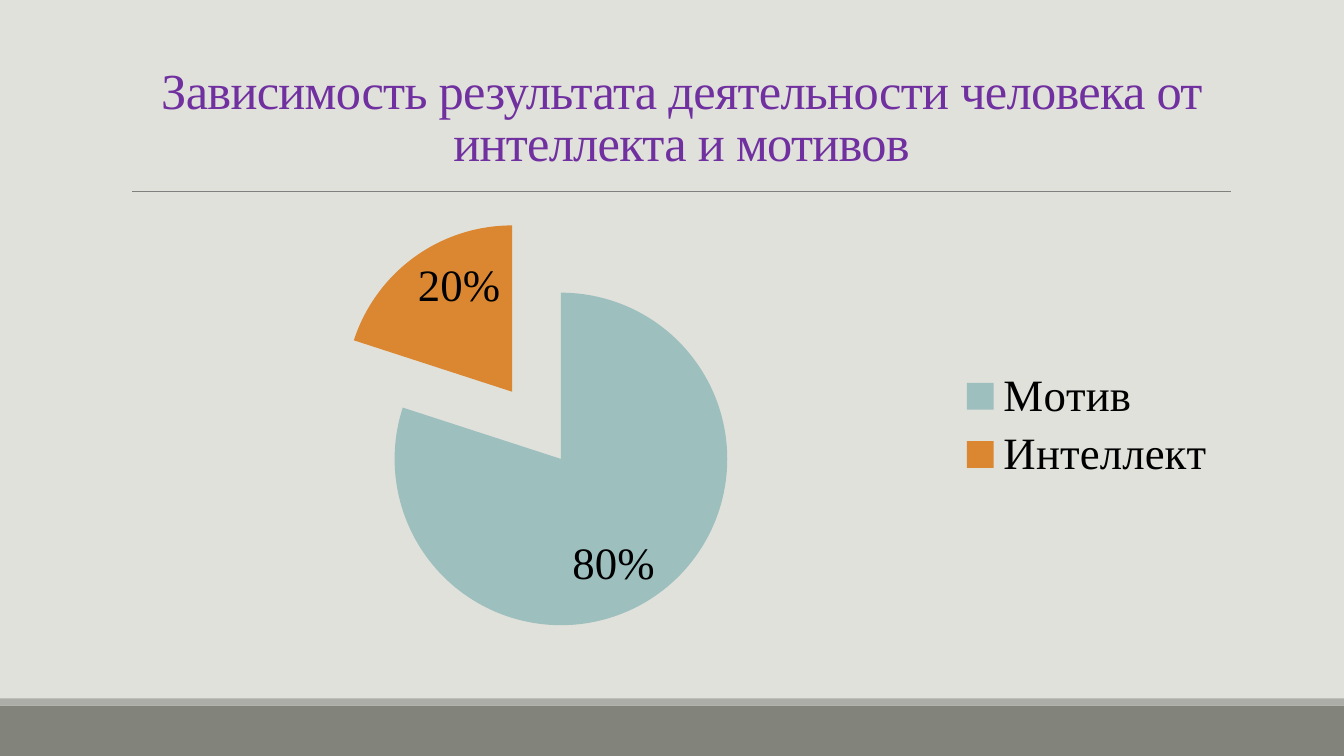
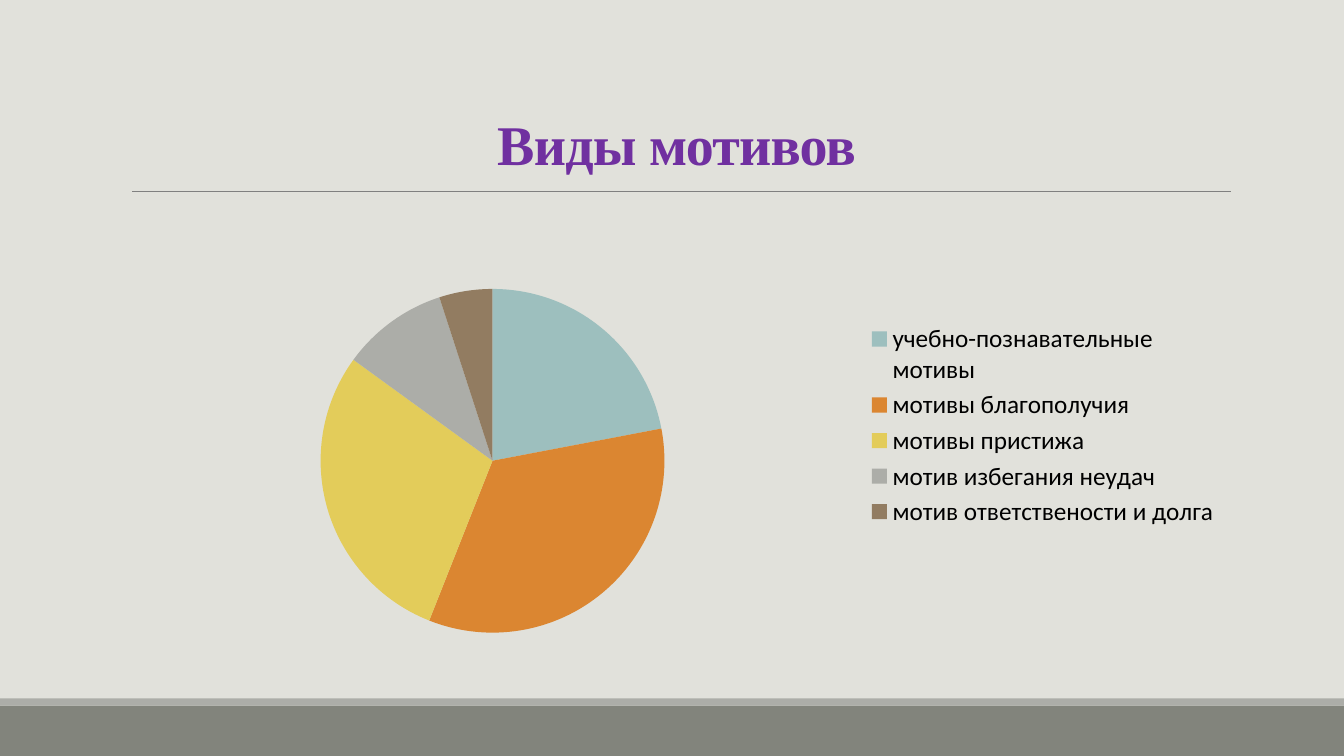
from lxml import etree
from pptx import Presentation
from pptx.chart.data import CategoryChartData
from pptx.dml.color import RGBColor
from pptx.enum import chart as charts, shapes, text
from pptx.oxml import ns
from pptx.util import Inches, Pt

COLORS = {
    "background": "E1E1DB",
    "footer": "82847C",
    "stripe": "ACADA8",
    "rule": "808080",
    "title": "7030A0",
    "text": "000000",
}
SLICES = ["9DBFBE", "DB8631", "E3CC5A", "ACADA8", "927C61"]
SERIF, SANS = "Times New Roman", "Calibri"


def rgb(name):
    return RGBColor.from_string(COLORS[name])


class Deck:
    def __init__(self):
        self.presentation = Presentation()
        self.presentation.slide_width = Inches(13.33)
        self.presentation.slide_height = Inches(7.5)
        fill = self.presentation.slide_master.background.fill
        fill.solid()
        fill.fore_color.rgb = rgb("background")

    def add_slide(self):
        layout = self.presentation.slide_layouts.get_by_name("Title Only")
        self.slide = self.presentation.slides.add_slide(layout)
        self.band(7, 0.5, "footer")
        self.band(6.93, 0.07, "stripe")
        self.rule(1.31, 12.21, 1.9)

    def band(self, top, height, color):
        shape = self.slide.shapes.add_shape(
            shapes.MSO_SHAPE.RECTANGLE, 0, Inches(top), Inches(13.33), Inches(height))
        shape.shadow.inherit = False
        shape.fill.solid()
        shape.fill.fore_color.rgb = rgb(color)
        shape.line.fill.background()

    def rule(self, left, right, top):
        line = self.slide.shapes.add_connector(
            shapes.MSO_CONNECTOR.STRAIGHT,
            Inches(left), Inches(top), Inches(right), Inches(top))
        line.line.color.rgb = rgb("rule")
        line.line.width = Pt(0.5)
        etree.SubElement(line._element.spPr, ns.qn("a:effectLst"))

    def title(self, words, left, top, size, bold=False):
        shape = self.slide.shapes.title
        shape.left, shape.top = Inches(left), Inches(top)
        shape.width, shape.height = Inches(11), Inches(1.59)
        frame = shape.text_frame
        frame.word_wrap = True
        frame.auto_size = text.MSO_AUTO_SIZE.NONE
        frame.vertical_anchor = text.MSO_ANCHOR.BOTTOM
        paragraph = frame.paragraphs[0]
        paragraph.alignment = text.PP_ALIGN.CENTER
        paragraph.line_spacing = 0.85
        run = paragraph.add_run()
        run.text = words
        self.style(run.font, SERIF, size, "title")
        run.font.bold = bold
        run._r.get_or_add_rPr().set("spc", "-50")

    def style(self, font, name, size, color="text"):
        font.name, font.size = name, Pt(size)
        font.color.rgb = rgb(color)

    def pie(self, name, values, legend_font=SANS, legend_size=18):
        data = CategoryChartData()
        data.categories = list(values)
        data.add_series(name, list(values.values()))
        chart = self.slide.shapes.add_chart(
            charts.XL_CHART_TYPE.PIE, Inches(1.2), Inches(2.02),
            Inches(11), Inches(4.4), data).chart
        self.style(chart.font, SANS, 18)
        chart.has_title = False
        chart.has_legend = True
        chart.legend.position = charts.XL_LEGEND_POSITION.RIGHT
        chart.legend.include_in_layout = False
        self.style(chart.legend.font, legend_font, legend_size)
        plot = chart.plots[0]
        plot.vary_by_categories = True
        for index, color in zip(range(len(values)), SLICES):
            fill = plot.series[0].points[index].format.fill
            fill.solid()
            fill.fore_color.rgb = RGBColor.from_string(color)
        return chart

    def explode(self, chart, percent):
        for properties in chart._chartSpace.xpath(".//c:dPt/c:spPr"):
            explosion = etree.Element(ns.qn("c:explosion"), val=str(percent))
            properties.addprevious(explosion)

    def percent_labels(self, chart, size):
        plot = chart.plots[0]
        plot.has_data_labels = True
        labels = plot.data_labels
        labels.show_percentage = True
        labels.show_value = False
        labels.number_format = "0%"
        labels.number_format_is_linked = False
        labels.position = charts.XL_LABEL_POSITION.INSIDE_END
        self.style(labels.font, SERIF, size)

    def place_plot(self, chart, **fractions):
        area = chart._chartSpace.xpath(".//c:plotArea")[0]
        for old in area.findall(ns.qn("c:layout")):
            area.remove(old)
        layout = etree.Element(ns.qn("c:layout"))
        manual = etree.SubElement(layout, ns.qn("c:manualLayout"))
        settings = {"layoutTarget": "inner", "xMode": "edge", "yMode": "edge", **fractions}
        for tag, value in settings.items():
            etree.SubElement(manual, ns.qn("c:" + tag), val=str(value))
        area.insert(0, layout)


def main():
    deck = Deck()

    deck.add_slide()
    deck.title("Зависимость результата деятельности человека от интеллекта и мотивов",
               1.26, 0.16, 36)
    results = deck.pie("Series 1", {"Мотив": 80, "Интеллект": 20}, SERIF, 32)
    deck.explode(results, 25)
    deck.percent_labels(results, 32)

    deck.add_slide()
    deck.title("Виды мотивов", 1.21, 0.22, 40, bold=True)
    motives = deck.pie("Виды мотивов", {
        "учебно-познавательные мотивы": 22,
        "мотивы благополучия": 34,
        "мотивы пристижа": 29,
        "мотив избегания неудач": 10,
        "мотив ответствености и долга": 5,
    })
    deck.place_plot(motives, x=0.18, y=0.19, w=0.31, h=0.78)

    deck.presentation.save("out.pptx")


if __name__ == "__main__":
    main()
